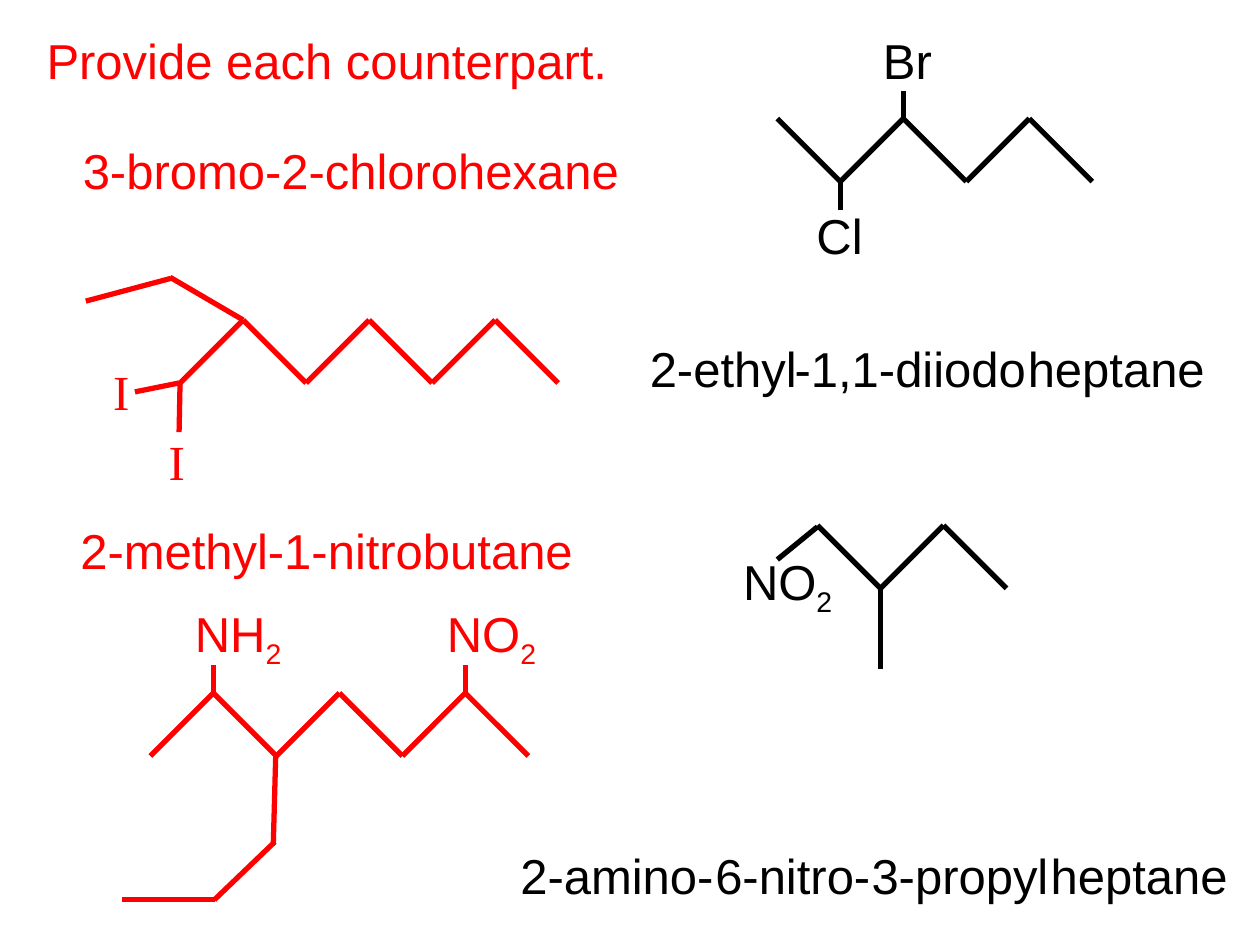
from dataclasses import dataclass

from lxml import etree
from pptx import Presentation
from pptx import util as u
from pptx.dml.color import RGBColor
from pptx.enum import shapes, text
from pptx.oxml.ns import qn

RED = RGBColor(0xFF, 0x00, 0x00)
BLACK = RGBColor(0x00, 0x00, 0x00)
STEP = 1.27
LABEL_HEIGHT = 1.45


@dataclass(frozen=True)
class Label:
    words: str
    left: float
    top: float
    width: float
    color: RGBColor = BLACK
    font: str = "Arial"
    subscript: str = ""


@dataclass(frozen=True)
class Bond:
    x1: float
    y1: float
    x2: float
    y2: float
    color: RGBColor = BLACK


@dataclass(frozen=True)
class Chain:
    left: float
    top: float
    bonds: int
    starts_low: bool = False
    color: RGBColor = BLACK


DIIODO_ROW = 6.69
AMINO_ROW = 16.92

NAMES = [
    Label("Provide each counterpart.", 0.69, 0.48, 11.84, RED),
    Label("3-bromo-2-chlorohexane", 1.42, 2.7, 11.63, RED),
    Label("heptane", 20.47, DIIODO_ROW, 4.09),
    Label("2-methyl-1-nitrobutane", 1.37, 10.36, 10.74, RED),
    Label("heptane", 20.93, AMINO_ROW, 4.09),
    Label("2-amino-", 10.24, AMINO_ROW, 4.47),
    Label("2-ethyl", 12.85, DIIODO_ROW, 3.51),
]

ATOMS = [
    Label("I", 2.03, 7.15, 0.84, RED, "Times New Roman"),
    Label("I", 3.15, 8.56, 0.84, RED, "Times New Roman"),
    Label("Cl", 16.21, 4.01, 1.45),
    Label("Br", 17.55, 0.48, 1.5),
    Label("NO", 14.73, 11.07, 2.36, subscript="2"),
    Label("NH", 3.68, 12.12, 2.31, RED, subscript="2"),
    Label("NO", 8.76, 12.12, 2.36, RED, subscript="2"),
]

NAME_MIDDLES = [
    Label("6-nitro-", 14.17, AMINO_ROW, 3.68),
    Label("3-propyl", 17.32, AMINO_ROW, 4.14),
    Label("-1,1-diiodo", 15.77, DIIODO_ROW, 5.16),
]

CHAINS = [
    Chain(3.63, 6.45, 6, True, RED),
    Chain(15.67, 2.39, 5),
    Chain(16.48, 10.59, 3),
    Chain(3.03, 13.97, 6, True, RED),
]

BRANCHES = [
    Bond(1.73, 6.07, 3.45, 5.61, RED),
    Bond(3.43, 5.59, 4.9, 6.45, RED),
    Bond(3.63, 7.7, 3.61, 8.71, RED),
    Bond(3.61, 7.72, 2.72, 7.9, RED),
    Bond(16.94, 4.24, 16.94, 3.63),
    Bond(18.21, 2.44, 18.21, 1.83),
    Bond(16.48, 10.62, 15.67, 11.28),
    Bond(17.75, 13.49, 17.75, 11.79),
    Bond(5.56, 15.19, 5.51, 16.99, RED),
    Bond(5.54, 16.97, 4.32, 18.14, RED),
    Bond(4.3, 14, 4.3, 13.41, RED),
    Bond(9.38, 14, 9.38, 13.41, RED),
    Bond(4.34, 18.14, 2.46, 18.14, RED),
]


def add_run(paragraph, words: str, *, font: str, color: RGBColor, size: int = 28, baseline: int = 0) -> None:
    run = paragraph.add_run()
    run.text = words
    run.font.name = font
    run.font.size = u.Pt(size)
    run.font.color.rgb = color
    if baseline:
        run._r.get_or_add_rPr().set("baseline", str(baseline))


def draw_labels(slide, labels: list[Label]) -> None:
    for label in labels:
        box = slide.shapes.add_textbox(u.Cm(label.left), u.Cm(label.top), u.Cm(label.width), u.Cm(LABEL_HEIGHT))
        frame = box.text_frame
        frame.word_wrap = False
        frame.auto_size = text.MSO_AUTO_SIZE.SHAPE_TO_FIT_TEXT
        frame.vertical_anchor = text.MSO_ANCHOR.MIDDLE
        paragraph = frame.paragraphs[0]
        add_run(paragraph, label.words, font=label.font, color=label.color)
        if label.subscript:
            add_run(paragraph, label.subscript, font=label.font, color=label.color, baseline=-25000)


def draw_bond(slide, bond: Bond) -> None:
    line = slide.shapes.add_connector(
        shapes.MSO_CONNECTOR.STRAIGHT, u.Cm(bond.x1), u.Cm(bond.y1), u.Cm(bond.x2), u.Cm(bond.y2)
    )
    line.line.color.rgb = bond.color
    line.line.width = u.Pt(3)
    etree.SubElement(line._element.spPr, qn("a:effectLst"))


def draw_chain(slide, chain: Chain) -> None:
    corners = [
        (chain.left + i * STEP, chain.top + STEP * ((i + chain.starts_low) % 2))
        for i in range(chain.bonds + 1)
    ]
    for start, end in zip(corners, corners[1:]):
        draw_bond(slide, Bond(*start, *end, chain.color))


def main() -> None:
    deck = Presentation()
    deck.slide_width, deck.slide_height = u.Cm(25.4), u.Cm(19.05)
    slide = deck.slides.add_slide(deck.slide_layouts[6])
    draw_labels(slide, NAMES)
    for chain in CHAINS:
        draw_chain(slide, chain)
    for branch in BRANCHES:
        draw_bond(slide, branch)
    draw_labels(slide, ATOMS)
    draw_labels(slide, NAME_MIDDLES)
    deck.save("out.pptx")


if __name__ == "__main__":
    main()
